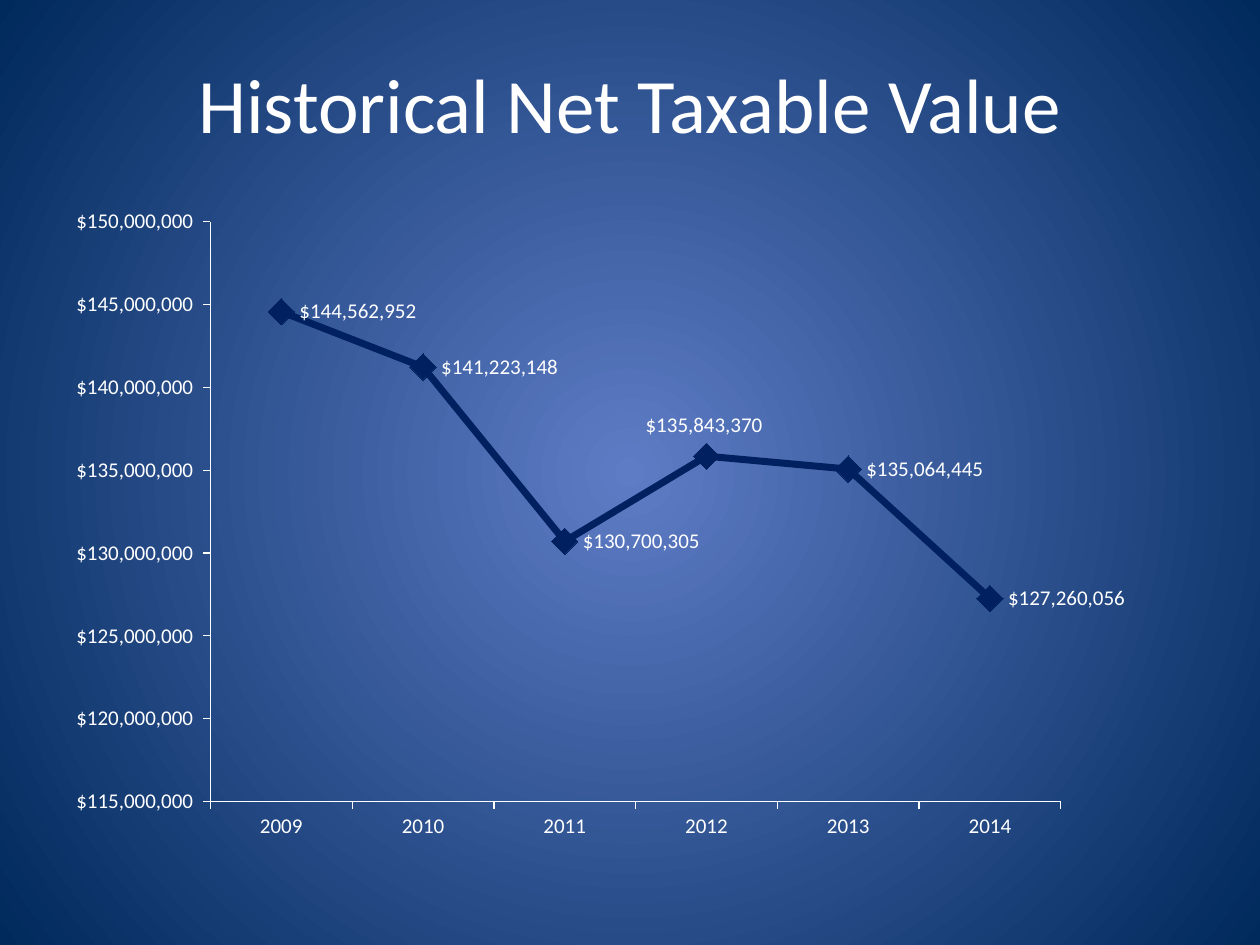
from pptx import Presentation
from pptx import util as u
from pptx.chart.data import CategoryChartData
from pptx.dml.color import RGBColor
from pptx.enum import chart as c, text
from pptx.oxml import parse_xml
from pptx.oxml.ns import nsdecls, qn

WHITE = RGBColor(0xFF, 0xFF, 0xFF)
NAVY = RGBColor(0x00, 0x20, 0x60)
GLOW = RGBColor(0x5E, 0x7C, 0xC5)
EDGE = RGBColor(0x00, 0x29, 0x5C)
FONT = "Calibri"
DOLLARS = '"$"#,##0_);[Red]\\("$"#,##0\\)'
NET_VALUES = {
    "2009": 144562952,
    "2010": 141223148,
    "2011": 130700305,
    "2012": 135843370,
    "2013": 135064445,
    "2014": 127260056,
}


def set_font(font, size, color=WHITE):
    font.name = FONT
    font.size = u.Pt(size)
    font.color.rgb = color


def add_text(slide, content, box, size, color=WHITE, align=text.PP_ALIGN.CENTER):
    shape = slide.shapes.add_textbox(*box)
    frame = shape.text_frame
    frame.word_wrap = True
    frame.vertical_anchor = text.MSO_ANCHOR.MIDDLE
    frame.margin_bottom = u.Inches(0.27)
    paragraph = frame.paragraphs[0]
    paragraph.alignment = align
    run = paragraph.add_run()
    run.text = content
    set_font(run.font, size, color)
    return shape


presentation = Presentation()
presentation.slide_width = u.Inches(10)
presentation.slide_height = u.Inches(7.5)
slide = presentation.slides.add_slide(presentation.slide_layouts[6])
margin = int(presentation.slide_width * 0.05)
content_width = presentation.slide_width - 2 * margin

# Background: a circular glow from the centre
slide.background.fill.gradient()
gradient = slide.background._cSld.find(".//" + qn("a:gradFill"))
gradient.getparent().replace(gradient, parse_xml(
    f'<a:gradFill {nsdecls("a")} rotWithShape="1"><a:gsLst>'
    f'<a:gs pos="0"><a:srgbClr val="{GLOW}"/></a:gs>'
    f'<a:gs pos="100000"><a:srgbClr val="{EDGE}"/></a:gs></a:gsLst>'
    '<a:path path="circle"><a:fillToRect l="50000" t="50000" r="50000" b="50000"/>'
    '</a:path></a:gradFill>'))

add_text(slide, "Historical Net Taxable Value",
         (margin, u.Inches(0.3), content_width, u.Inches(1.25)), size=44)

# Line chart
chart_data = CategoryChartData(number_format=DOLLARS)
chart_data.categories = list(NET_VALUES)
chart_data.add_series("Series 1", list(NET_VALUES.values()))
chart = slide.shapes.add_chart(
    c.XL_CHART_TYPE.LINE_MARKERS_STACKED, margin, u.Inches(1.5),
    content_width, u.Inches(5.2), chart_data).chart
chart.has_legend = False
chart.has_title = False
set_font(chart.font, 18)

# Fixed inner plot area, as shares of the chart
plot_area = chart._chartSpace.find(".//" + qn("c:plotArea"))
for old_layout in plot_area.findall(qn("c:layout")):
    plot_area.remove(old_layout)
shares = {"x": 0.13, "y": 0.05, "w": 0.75, "h": 0.885}
modes = '<c:layoutTarget val="inner"/><c:xMode val="edge"/><c:yMode val="edge"/>'
places = "".join(f'<c:{key} val="{share}"/>' for key, share in shares.items())
plot_area.insert(0, parse_xml(
    f'<c:layout {nsdecls("c")}><c:manualLayout>{modes}{places}'
    '</c:manualLayout></c:layout>'))

for axis in (chart.category_axis, chart.value_axis):
    axis.has_major_gridlines = False
    axis.major_tick_mark = c.XL_TICK_MARK.OUTSIDE
    axis.minor_tick_mark = c.XL_TICK_MARK.NONE
    axis.format.line.color.rgb = WHITE
    axis.format.line.width = u.Pt(0.75)
    set_font(axis.tick_labels.font, 12)
value_axis = chart.value_axis
value_axis.minimum_scale = 115_000_000
value_axis.maximum_scale = 150_000_000
value_axis.major_unit = 5_000_000
value_axis.tick_labels.number_format = DOLLARS
value_axis.tick_labels.number_format_is_linked = False

series = chart.plots[0].series[0]
series.smooth = False
series.format.line.color.rgb = NAVY
series.format.line.width = u.Pt(4)
marker = series.marker
marker.style = c.XL_MARKER_STYLE.DIAMOND
marker.size = 15
marker.format.fill.solid()
marker.format.fill.fore_color.rgb = NAVY
marker.format.line.color.rgb = NAVY

labels = series.data_labels
labels.show_value = True
labels.position = c.XL_LABEL_POSITION.RIGHT
labels.number_format = DOLLARS
labels.number_format_is_linked = False
set_font(labels.font, 12)
peak_label = series.points[list(NET_VALUES).index("2012")].data_label
set_font(peak_label.font, 12)
peak_label.position = c.XL_LABEL_POSITION.ABOVE

presentation.save("out.pptx")
